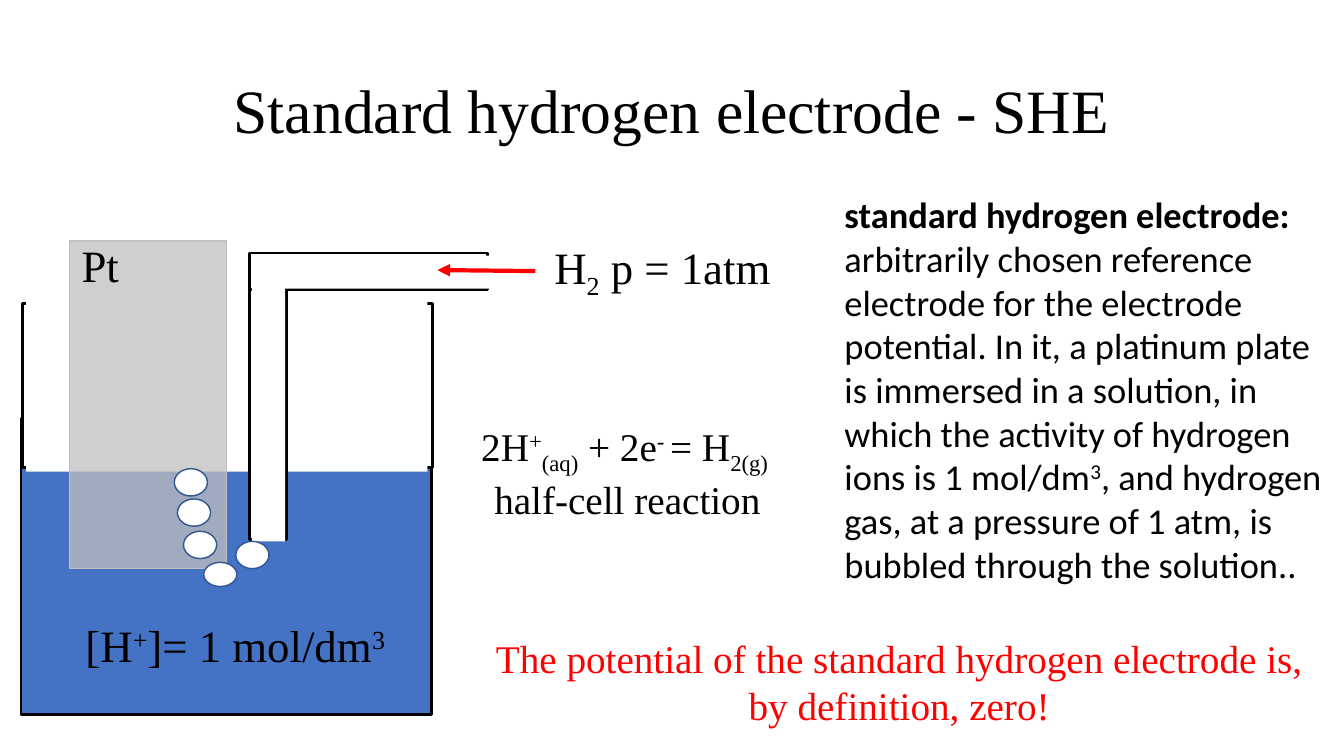
import pptx
import pptx.util
import pptx.dml.color
import pptx.enum.shapes
import pptx.enum.text
import pptx.oxml.ns
from lxml import etree

COLORS = {"ink": "000000", "paper": "FFFFFF", "solution": "4472C4",
          "platinum": "BFBFBF", "bubble": "325491", "accent": "FF0000"}
SERIF, SANS = "Times New Roman", "Calibri"
RECT = pptx.enum.shapes.MSO_SHAPE.RECTANGLE
OVAL = pptx.enum.shapes.MSO_SHAPE.OVAL
CENTER = pptx.enum.text.PP_ALIGN.CENTER
LEFT = pptx.enum.text.PP_ALIGN.LEFT
BASELINES = {"sup": "30000", "sub": "-25000"}
COLUMNS, ROWS = 64, 36


def color(name):
    return pptx.dml.color.RGBColor.from_string(COLORS[name])


def child(parent, tag, **attributes):
    return etree.SubElement(parent, pptx.oxml.ns.qn(tag), attributes)


class Board:
    def __init__(self, deck):
        self.column = deck.slide_width / COLUMNS
        self.row = deck.slide_height / ROWS
        self.slide = deck.slides.add_slide(deck.slide_layouts[5])

    def place(self, left, top, width, height):
        return [round(left * self.column), round(top * self.row),
                round(width * self.column), round(height * self.row)]

    def add_runs(self, paragraph, runs, size, font, ink):
        for words, *styles in runs:
            if words == "\n":
                paragraph.add_line_break()
                continue
            run = paragraph.add_run()
            run.text = words
            run.font.size = pptx.util.Pt(size)
            run.font.name = font
            run.font.bold = "bold" in styles
            run.font.color.rgb = color(ink)
            for style in styles:
                if style in BASELINES:
                    run._r.get_or_add_rPr().set("baseline", BASELINES[style])

    def title(self, cell, words):
        heading = self.slide.shapes.title
        heading.left, heading.top, heading.width, heading.height = self.place(*cell)
        heading.text_frame.vertical_anchor = pptx.enum.text.MSO_ANCHOR.MIDDLE
        paragraph = heading.text_frame.paragraphs[0]
        paragraph.alignment = CENTER
        paragraph.line_spacing = 0.9
        self.add_runs(paragraph, [(words,)], 44, SERIF, "ink")

    def text(self, cell, runs, size=32, font=SERIF, ink="ink", align=LEFT, wrap=False):
        frame = self.slide.shapes.add_textbox(*self.place(*cell)).text_frame
        frame.word_wrap = wrap
        frame.auto_size = pptx.enum.text.MSO_AUTO_SIZE.SHAPE_TO_FIT_TEXT
        frame.paragraphs[0].alignment = align
        self.add_runs(frame.paragraphs[0], runs, size, font, ink)

    def shape(self, cell, fill="paper", line=None, width=2, kind=RECT, alpha=None):
        part = self.slide.shapes.add_shape(kind, *self.place(*cell))
        part.shadow.inherit = False
        part.fill.solid()
        part.fill.fore_color.rgb = color(fill)
        if alpha:
            tint = part._element.spPr.find(".//" + pptx.oxml.ns.qn("a:srgbClr"))
            child(tint, "a:alpha", val=str(alpha * 1000))
        if line:
            part.line.color.rgb = color(line)
            part.line.width = pptx.util.Pt(width)
        else:
            part.line.fill.background()

    def arrow(self, start, end, ink, width):
        link = self.slide.shapes.add_connector(
            pptx.enum.shapes.MSO_CONNECTOR.STRAIGHT, *self.place(*start, *end))
        link.line.color.rgb = color(ink)
        link.line.width = pptx.util.Pt(width)
        child(link._element.spPr.find(pptx.oxml.ns.qn("a:ln")), "a:tailEnd", type="triangle")
        child(link._element.spPr, "a:effectLst")


def main():
    deck = pptx.Presentation()
    deck.slide_width = pptx.util.Inches(13.333)
    deck.slide_height = pptx.util.Inches(7.5)
    board = Board(deck)
    board.title((4.4, 1.92, 55.2, 6.96), "Standard hydrogen electrode - SHE")

    board.shape((1, 19.92, 19.54, 14.11), "solution", "ink")
    board.shape((1.06, 14.45, 19.54, 7.82), line="ink")
    board.shape((1.25, 13.87, 19.1, 8.59))

    for tube in ((11.9, 12.14, 1.73, 13.54), (11.9, 12.05, 11.33, 1.73)):
        board.shape(tube, line="ink")
    for bore in ((12, 13.44, 1.58, 12.34), (11.98, 12.17, 11.33, 1.58)):
        board.shape(bore)

    board.shape((3.31, 11.47, 7.49, 15.6), "platinum", "platinum", 1, alpha=75)
    board.text((3.41, 11.09, 2.78, 3.07), [("Pt",)])

    for left, top, height in ((11.23, 25.78, 1.3), (9.7, 26.78, 1.15),
                              (8.74, 25.3, 1.3), (8.45, 23.76, 1.3), (8.3, 22.32, 1.3)):
        board.shape((left, top, 1.58, height), line="bubble", width=1, kind=OVAL)

    board.arrow((25.49, 12.91), (20.83, 12.86), "accent", 3)
    board.text((25.92, 11.18, 11.47, 3.07), [("H",), ("2", "sub"), (" p = 1atm",)])
    board.text((3.6, 29.18, 15.89, 3.07),
               [("[H",), ("+", "sup"), ("]= 1 mol/dm",), ("3", "sup")])
    board.text((21.89, 19.87, 15.98, 4.99),
               [("2H",), ("+", "sup"), ("(aq)", "sub"), (" + 2e",), ("- ", "sup"),
                ("= H",), ("2(g) ", "sub"), ("\n",), ("half-cell reaction",)],
               size=28, align=CENTER)
    board.text((23.09, 29.95, 39.46, 4.99),
               [("The potential of the standard hydrogen electrode is, "
                 "by definition, zero!",)],
               size=28, ink="accent", align=CENTER, wrap=True)
    board.text((39.74, 8.93, 23.95, 19.39),
               [("standard hydrogen electrode:", "bold"), ("\n",),
                ("arbitrarily chosen reference electrode for the electrode potential. "
                 "In it, a platinum plate is immersed in a solution, in which the "
                 "activity of hydrogen ions is 1 mol/dm",), ("3", "sup"),
                (", and hydrogen gas, at a pressure of 1 atm, is bubbled "
                 "through the solution..",)],
               size=26, font=SANS, wrap=True)
    deck.save("out.pptx")


if __name__ == "__main__":
    main()
